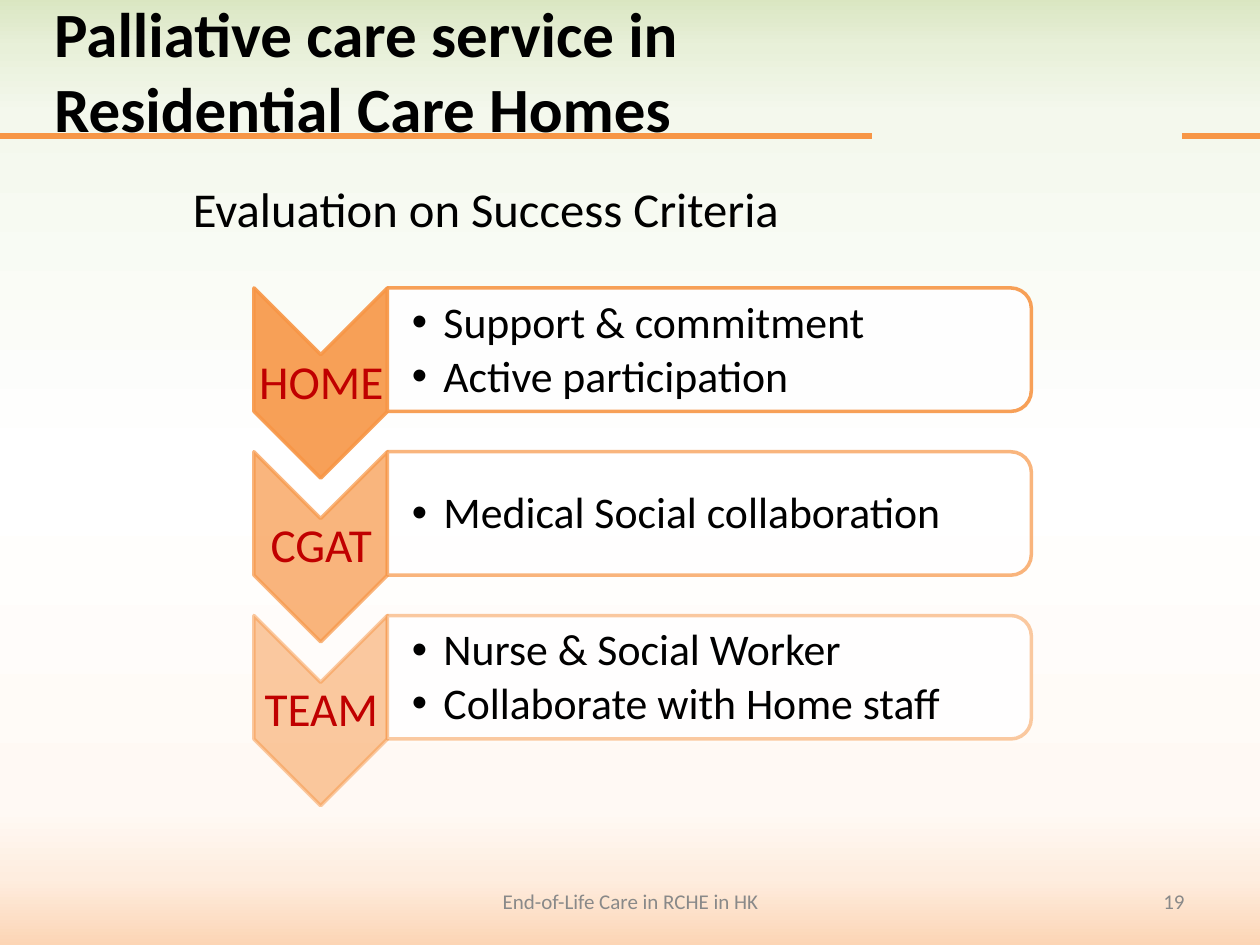
"""Build a slide on success criteria for palliative care in care homes."""
from dataclasses import dataclass

from lxml import etree
from pptx import Presentation
from pptx import util as u
from pptx.dml.color import RGBColor
from pptx.enum import shapes, text
from pptx.oxml import ns

KIND = shapes.MSO_SHAPE
LEFT, MID, RIGHT = text.PP_ALIGN.LEFT, text.PP_ALIGN.CENTER, text.PP_ALIGN.RIGHT


@dataclass(frozen=True)
class Theme:
    font: str = "Calibri"
    ink: str = "000000"
    red: str = "C00000"
    grey: str = "898989"
    main: str = "F79646"
    white: str = "FFFFFF"
    head: float = 36
    sub: float = 27.8
    tag: float = 27
    item: float = 25
    foot: float = 12
    sky: tuple = ((0, "FCD5B5"), (7, "FEEDDF"), (14, "FFF9F4"), (50, "FFFFFF"),
                  (87, "F4F8ED"), (94, "E8F0D9"), (100, "D7E4BD"))


def add(node, tag, **attrs):
    """Append a drawing element to a node."""
    return etree.SubElement(node, ns.qn("a:" + tag), attrs)


class Deck:
    """Hold the theme, the slide and its grid of 100 columns by 75 rows."""

    def __init__(self, theme):
        self.theme = theme
        self.prs = Presentation()
        self.prs.slide_width, self.prs.slide_height = u.Inches(10), u.Inches(7.5)
        self.col = self.prs.slide_width / 100
        self.row = self.prs.slide_height / 75
        self.slide = self.prs.slides.add_slide(self.prs.slide_layouts[1])
        self.pool = self.slide.shapes

    def span(self, x, y, w, h):
        """Turn grid cells into lengths."""
        return (round(x * self.col), round(y * self.row),
                round(w * self.col), round(h * self.row))

    def paint(self, fmt, color, alpha):
        """Set a solid colour with an opacity in percent."""
        fmt.solid()
        fmt.fore_color.rgb = RGBColor.from_string(color)
        node = fmt._xPr.find(ns.qn("a:solidFill"))[0]
        add(node, "alpha", val=str(alpha * 1000))

    def shade(self, area):
        """Draw the gradient backdrop."""
        shape = self.pool.add_shape(KIND.RECTANGLE, *self.span(*area))
        shape.shadow.inherit = False
        shape.line.fill.background()
        shape.fill.gradient()
        shape.fill.gradient_angle = 90
        stops = shape._element.spPr.find(".//" + ns.qn("a:gsLst"))
        stops[:] = []
        for pos, color in self.theme.sky:
            add(add(stops, "gs", pos=str(pos * 1000)), "srgbClr", val=color)
        self.pool._spTree.insert(2, shape._element)

    def rule(self, x, end, y):
        """Draw a level line between two columns."""
        left, top, right, base = self.span(x, y, end, y)
        line = self.pool.add_connector(shapes.MSO_CONNECTOR.STRAIGHT, left, top, right, base)
        line.line.color.rgb = RGBColor.from_string(self.theme.main)
        line.line.width = u.Pt(3)
        add(line._element.spPr, "effectLst")

    def turned(self, kind, area, fill, edge):
        """Draw a shape turned by a quarter."""
        shape = self.pool.add_shape(kind, *self.span(*area))
        shape.rotation = 90
        shape.shadow.inherit = False
        self.paint(shape.fill, *fill)
        self.paint(shape.line.fill, self.theme.main, edge)
        shape.line.width = u.Pt(2)

    def pour(self, box, lines, size, color, align=LEFT, bold=False,
             space=None, after=0, bullet=False):
        """Fill a text frame with lines of one style."""
        frame = box.text_frame
        frame.word_wrap = True
        frame.auto_size = text.MSO_AUTO_SIZE.NONE
        frame.text = "\n".join(lines)
        for para in frame.paragraphs:
            para.alignment = align
            para.line_spacing = space
            para.space_before, para.space_after = u.Pt(0), u.Pt(after)
            props = para._p.get_or_add_pPr()
            shift = u.Inches(0.25) if bullet else 0
            props.set("marL", str(shift))
            props.set("indent", str(-shift))
            if bullet:
                add(props, "buFont", typeface="Arial")
                add(props, "buChar", char="•")
            else:
                add(props, "buNone")
            font = para.font
            font.name, font.size, font.bold = self.theme.font, u.Pt(size), bold
            font.color.rgb = RGBColor.from_string(color)
        return frame

    def holder(self, index, area, line, size, **style):
        """Move and fill a template placeholder."""
        box = self.slide.placeholders[index]
        box.left, box.top, box.width, box.height = self.span(*area)
        return self.pour(box, [line], size, self.theme.ink, **style)

    def label(self, area, lines, size, color, inset=None, **style):
        """Add a text box centred on its height."""
        box = self.pool.add_textbox(*self.span(*area))
        frame = self.pour(box, lines, size, color, **style)
        frame.vertical_anchor = text.MSO_ANCHOR.MIDDLE
        if inset is not None:
            frame.margin_top = frame.margin_right = frame.margin_bottom = u.Inches(0.02)
            frame.margin_left = u.Inches(inset)

    def step(self, y, tag, items, alpha):
        """Draw one chevron with its list panel."""
        look = self.theme
        self.turned(KIND.CHEVRON, (17.9, y + 1.7, 15.1, 10.6), (look.main, alpha), alpha)
        self.label((20.2, y + 4.8, 10.6, 4.5), [tag], look.tag, look.red,
                   inset=0.02, align=MID, space=0.9)
        self.turned(KIND.ROUND_2_SAME_RECTANGLE, (51.4, y - 21.2, 9.8, 51.1),
                    (look.white, 90), alpha)
        self.label((30.8, y, 50.6, 8.9), items, look.item, look.ink,
                   inset=0.19, space=0.9, after=3.75, bullet=True)


def main():
    """Build and save the slide."""
    look = Theme()
    deck = Deck(look)
    deck.shade((0, -0.8, 100, 75.8))
    for x, end in ((93.8, 100), (0, 69.2)):
        deck.rule(x, end, 10.8)
    deck.label((34.2, 69.5, 31.7, 4), ["End-of-Life Care in RCHE in HK"],
               look.foot, look.grey, align=MID)
    deck.label((71.7, 69.5, 23.3, 4), ["19"], look.foot, look.grey, align=RIGHT)
    steps = (
        ("HOME", ["Support & commitment", "Active participation"]),
        ("CGAT", ["Medical Social collaboration"]),
        ("TEAM", ["Nurse & Social Worker", "Collaborate with Home staff"]),
    )
    for i, (tag, items) in enumerate(steps):
        deck.step(23.4 + 13 * i, tag, items, 90 - 20 * i)
    deck.holder(1, (14.3, 15, 63.6, 4.7), "Evaluation on Success Criteria",
                look.sub, space=0.7)
    deck.holder(0, (3.3, -1, 60.7, 13.1),
                "Palliative care service in Residential Care Homes",
                look.head, bold=True)
    deck.prs.save("out.pptx")


if __name__ == "__main__":
    main()
